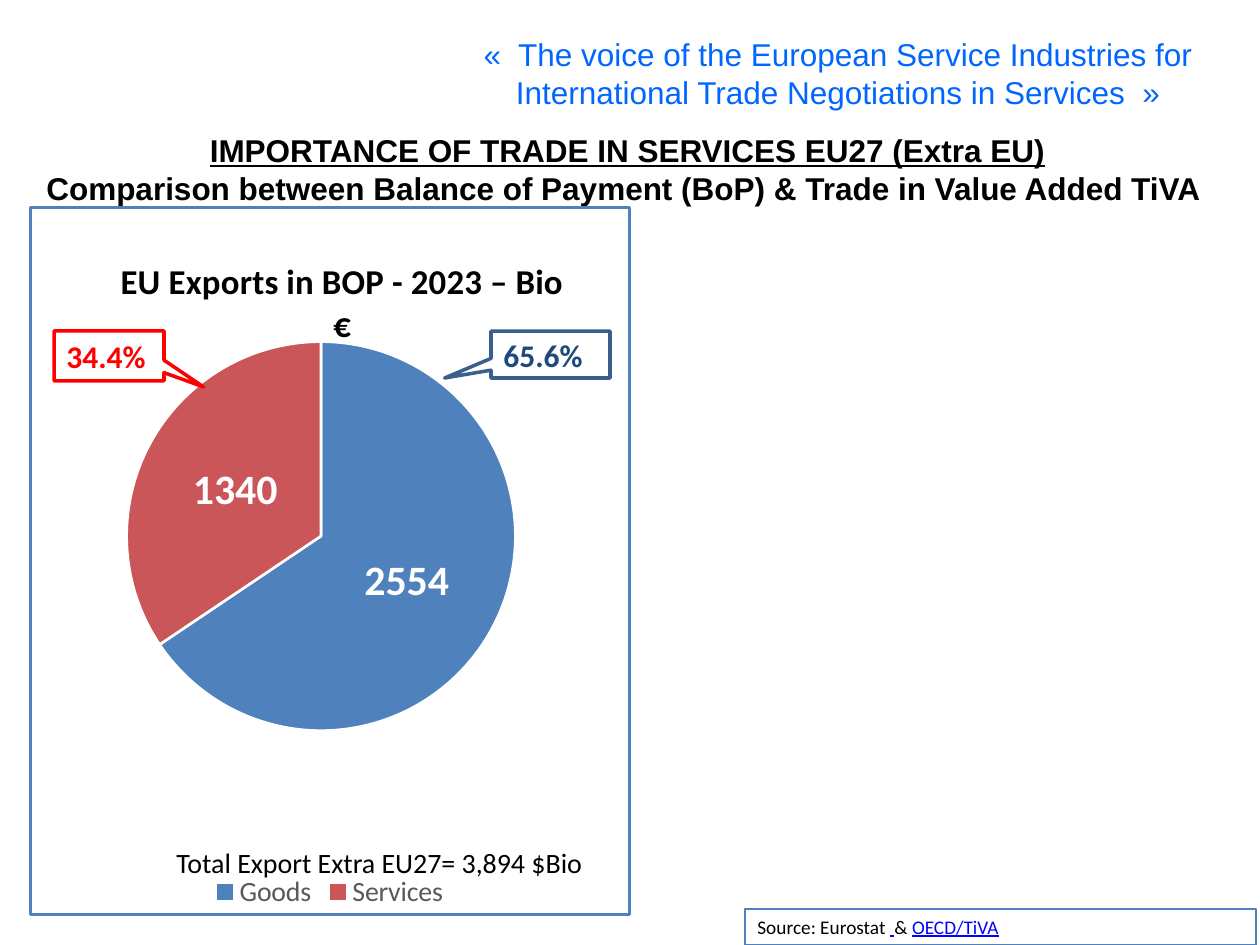
import pptx
import pptx.chart.data
import pptx.dml.color
import pptx.enum.chart
import pptx.enum.shapes
import pptx.enum.text
import pptx.oxml
import pptx.oxml.ns
import pptx.util

SCALE = 914400 / 126
BLUE, RED = "4F81BD", "CA5659"
Pt = pptx.util.Pt
Kind = pptx.enum.shapes.MSO_SHAPE
Side = pptx.enum.text.PP_ALIGN
Mid = pptx.enum.text.MSO_ANCHOR


def rgb(code):
    return pptx.dml.color.RGBColor.from_string(code)


def write(text, box, kind=None, adj=(), line=None, width=2, size=18, face="Calibri",
          color="000000", bold=False, align=Side.LEFT, anchor=Mid.TOP):
    area = [round(v * SCALE) for v in box]
    if kind is None:
        shape = slide.shapes.add_textbox(*area)
    else:
        shape = slide.shapes.add_shape(kind, *area)
        shape.shadow.inherit = False
        shape.fill.solid()
        shape.fill.fore_color.rgb = rgb("FFFFFF")
        shape.line.color.rgb = rgb(line)
        shape.line.width = Pt(width)
        for i, value in enumerate(adj):
            shape.adjustments[i] = value
    frame = shape.text_frame
    frame.word_wrap = True
    frame.vertical_anchor = anchor
    rows = [[(text, None, False)]] if isinstance(text, str) else text
    for i, row in enumerate(rows):
        para = frame.add_paragraph() if i else frame.paragraphs[0]
        para.alignment = align
        for words, tint, under in row:
            run = para.add_run()
            run.text = words
            run.font.name = face
            run.font.size = Pt(size)
            run.font.bold = bold
            run.font.underline = under
            run.font.color.rgb = rgb(tint or color)


deck = pptx.Presentation()
deck.slide_width = pptx.util.Inches(10)
deck.slide_height = pptx.util.Inches(7.5)
slide = deck.slides.add_slide(deck.slide_layouts[6])

write("«\u00a0 The voice of the European Service Industries for International Trade "
      "Negotiations\u00a0in Services \u00a0»", (444, 29, 788, 89),
      face="Arial", color="0066FF", align=Side.CENTER)
write([[("IMPORTANCE OF TRADE IN SERVICES EU27 (Extra EU)", None, True)],
       [("Comparison between Balance of Payment (BoP) & Trade in Value Added TiVA ", None, False)]],
      (0, 125, 1255, 123), face="Arial", bold=True, align=Side.CENTER)
write([[("Source: Eurostat ", None, False), (" ", "0000FF", True),
        ("& ", None, False), ("OECD/TiVA", "0000FF", True)]],
      (745, 909, 511, 36), kind=Kind.RECTANGLE, line=BLUE, width=0.75, size=11)

data = pptx.chart.data.CategoryChartData()
data.categories = ["Goods", "Services"]
data.add_series("Series 1", (2554, 1340))
area = [round(v * SCALE) for v in (29, 206, 602, 710)]
chart = slide.shapes.add_chart(pptx.enum.chart.XL_CHART_TYPE.PIE, *area, data).chart
chart.font.name = "Calibri"
chart.font.size = Pt(10)
chart.font.color.rgb = rgb("000000")

chart.has_title = True
para = chart.chart_title.text_frame.paragraphs[0]
para.text = "EU Exports in BOP - 2023 – Bio €"
font = para.runs[0].font
font.name, font.size, font.bold = "Calibri", Pt(20), True
font.color.rgb = rgb("000000")
chart.chart_title.include_in_layout = False

chart.has_legend = True
legend = chart.legend
legend.position = pptx.enum.chart.XL_LEGEND_POSITION.BOTTOM
legend.include_in_layout = False
legend.font.name = "Calibri"
legend.font.size = Pt(16)
legend.font.color.rgb = rgb("595959")

plot = chart.plots[0]
plot.vary_by_categories = True
for i, color in enumerate((BLUE, RED)):
    part = plot.series[0].points[i].format
    part.fill.solid()
    part.fill.fore_color.rgb = rgb(color)
    part.line.color.rgb = rgb("FFFFFF")
    part.line.width = Pt(1.5)
plot.has_data_labels = True
labels = plot.data_labels
labels.show_value = True
labels.position = pptx.enum.chart.XL_LABEL_POSITION.CENTER
labels.font.name = "Calibri"
labels.font.size = Pt(24)
labels.font.bold = True
labels.font.color.rgb = rgb("FFFFFF")

names = pptx.oxml.ns.nsdecls("c", "a")
space = chart.element
find = pptx.oxml.ns.qn
pie = space.chart.plotArea
for old in pie.findall(find("c:layout")):
    pie.remove(old)
pie.insert(0, pptx.oxml.parse_xml(
    f'<c:layout {names}><c:manualLayout><c:layoutTarget val="inner"/>'
    '<c:xMode val="edge"/><c:yMode val="edge"/><c:x val="0.16"/><c:y val="0.19"/>'
    '<c:w val="0.65"/><c:h val="0.55"/></c:manualLayout></c:layout>'))
title = chart.chart_title._element
for old in title.findall(find("c:layout")):
    title.remove(old)
title.find(find("c:tx")).addnext(pptx.oxml.parse_xml(
    f'<c:layout {names}><c:manualLayout><c:xMode val="edge"/><c:yMode val="edge"/>'
    '<c:x val="0.14"/><c:y val="0.06"/></c:manualLayout></c:layout>'))
space.chart.addnext(pptx.oxml.parse_xml(
    f'<c:spPr {names}><a:solidFill><a:srgbClr val="FFFFFF"/></a:solidFill>'
    f'<a:ln w="{Pt(1.5)}"><a:solidFill><a:srgbClr val="{BLUE}"/></a:solidFill></a:ln></c:spPr>'))

for text, box, adj, line, color in (
        ("34.4%", (54, 331, 110, 50), (0.86, 0.62), "FF0000", "FF0000"),
        ("65.6%", (491, 331, 119, 47), (-0.89, 0.5), "3A5F8C", "1F497D")):
    write(text, box, kind=Kind.RECTANGULAR_CALLOUT, adj=adj, line=line,
          color=color, bold=True, anchor=Mid.MIDDLE)
write("Total Export Extra EU27= 3,894 $Bio", (164, 839, 438, 47), size=16)

deck.save("out.pptx")
